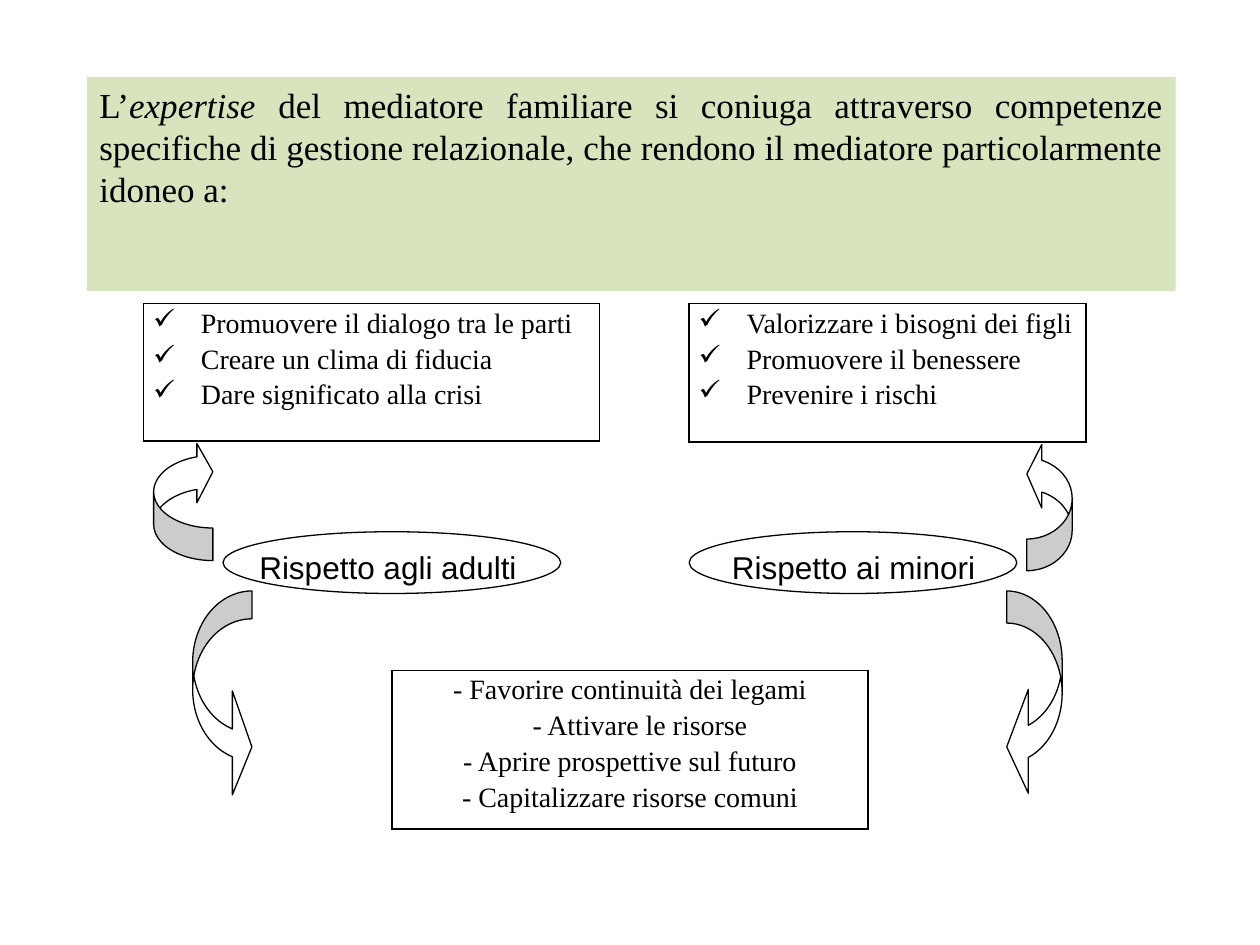
import dataclasses

import lxml.etree
import pptx
import pptx.dml.color
import pptx.enum.shapes
import pptx.enum.text
import pptx.oxml.ns
import pptx.util

SHAPE = pptx.enum.shapes.MSO_SHAPE
ALIGN = pptx.enum.text.PP_ALIGN
qn = pptx.oxml.ns.qn


@dataclasses.dataclass(frozen=True)
class Theme:
    ink: str = "000000"
    paper: str = "FFFFFF"
    banner: str = "D7E4BD"
    serif: str = "Times New Roman"
    sans: str = "Arial"
    banner_size: int = 20
    label_size: int = 18
    list_size: int = 16
    outline: float = 0.75
    border: float = 1
    line_spacing: float = 1.15
    hanging: float = 3.8


class Board:
    COLUMNS, ROWS = 100, 75

    def __init__(self, deck, theme):
        self.theme = theme
        self.column = deck.slide_width / self.COLUMNS
        self.row = deck.slide_height / self.ROWS
        self.page = deck.slides.add_slide(deck.slide_layouts[6])

    def place(self, left, top, width, height):
        return (round(left * self.column), round(top * self.row),
                round(width * self.column), round(height * self.row))

    def color(self, value):
        return pptx.dml.color.RGBColor.from_string(value)

    def style(self, para, face, size):
        for span in para.runs:
            span.font.name = face
            span.font.size = pptx.util.Pt(size)
            span.font.color.rgb = self.color(self.theme.ink)

    def shape(self, kind, area, fill=None, outlined=True, flips="", adjust=()):
        shape = self.page.shapes.add_shape(kind, *self.place(*area))
        shape.shadow.inherit = False
        if fill:
            shape.fill.solid()
            shape.fill.fore_color.rgb = self.color(fill)
        else:
            shape.fill.background()
        if outlined:
            shape.line.color.rgb = self.color(self.theme.ink)
            shape.line.width = pptx.util.Pt(self.theme.outline)
        else:
            shape.line.fill.background()
        for flip in flips:
            shape.element.spPr.find(qn("a:xfrm")).set("flip" + flip, "1")
        for index, value in enumerate(adjust):
            shape.adjustments[index] = value
        return shape

    def arrow(self, area, flips, adjust):
        self.shape(SHAPE.CURVED_LEFT_ARROW, area, self.theme.paper, flips=flips, adjust=adjust)

    def banner(self, area, spans):
        box = self.shape(SHAPE.RECTANGLE, area, self.theme.banner, outlined=False)
        box.text_frame.word_wrap = True
        box.text_frame.vertical_anchor = pptx.enum.text.MSO_ANCHOR.TOP
        para = box.text_frame.paragraphs[0]
        para.alignment = ALIGN.JUSTIFY
        for text, italic in spans:
            span = para.add_run()
            span.text = text
            span.font.italic = italic
        self.style(para, self.theme.serif, self.theme.banner_size)

    def label(self, area, text):
        box = self.page.shapes.add_textbox(*self.place(*area))
        box.text_frame.word_wrap = False
        box.text_frame.text = text
        self.style(box.text_frame.paragraphs[0], self.theme.sans, self.theme.label_size)

    def frame_cell(self, cell):
        properties = cell._tc.get_or_add_tcPr()
        for side in ("a:lnL", "a:lnR", "a:lnT", "a:lnB"):
            line = lxml.etree.SubElement(properties, qn(side),
                                         w=str(pptx.util.Pt(self.theme.border)))
            fill = lxml.etree.SubElement(line, qn("a:solidFill"))
            lxml.etree.SubElement(fill, qn("a:srgbClr"), val=self.theme.ink)
        cell.fill.background()

    def list_table(self, area, lines, bullet=None, shifts=None):
        table = self.page.shapes.add_table(1, 1, *self.place(*area)).table
        table.first_row = table.horz_banding = False
        cell = table.cell(0, 0)
        self.frame_cell(cell)
        cell.margin_left = cell.margin_right = round(0.75 * self.column)
        cell.margin_top = cell.margin_bottom = 0
        cell.text_frame.text = "\n".join(lines)
        for index, para in enumerate(cell.text_frame.paragraphs):
            para.line_spacing = self.theme.line_spacing
            para.alignment = ALIGN.JUSTIFY if bullet else ALIGN.CENTER
            properties = para._p.get_or_add_pPr()
            if bullet:
                hanging = round(self.theme.hanging * self.column)
                properties.set("marL", str(hanging))
                properties.set("indent", str(-hanging))
                lxml.etree.SubElement(properties, qn("a:buChar"), char=bullet)
            elif shifts and index in shifts:
                properties.set("marL", str(round(shifts[index] * self.column)))
            self.style(para, self.theme.serif, self.theme.list_size)


def main():
    deck = pptx.Presentation()
    deck.slide_width = pptx.util.Inches(10)
    deck.slide_height = pptx.util.Inches(7.5)
    board = Board(deck, Theme())

    board.list_table((11.4, 24.1, 36.2, 10.9), [
        "Promuovere il dialogo tra le parti",
        "Creare un clima di fiducia",
        "Dare significato alla crisi",
    ], bullet="✓")
    board.list_table((54.7, 24.1, 31.5, 11), [
        "Valorizzare i bisogni dei figli",
        "Promuovere il benessere",
        "Prevenire i rischi",
    ], bullet="✓")
    board.list_table((31.1, 53.2, 37.8, 12.6), [
        "- Favorire continuità dei legami",
        "- Attivare le risorse",
        "- Aprire prospettive sul futuro",
        "- Capitalizzare risorse comuni",
    ], shifts={1: 1.6})

    for left, width in ((17.7, 26.8), (54.7, 26)):
        board.shape(SHAPE.OVAL, (left, 42.2, width, 4.9))

    for area, flips, adjust in (
        ((12.2, 35.1, 4.7, 9.4), "HV", (0.55, 1.13, 0.27)),
        ((15.3, 46.9, 4.7, 16.5), "H", (0.47, 2.36, 0.33)),
        ((81.5, 35.1, 3.6, 10.2), "V", (0.7, 1.4, 0.33)),
        ((79.9, 46.9, 4.4, 16.5), "", (0.58, 2.37, 0.39)),
    ):
        board.arrow(area, flips, adjust)

    board.banner((6.9, 6.1, 86.4, 17), [
        ("L’", False),
        ("expertise", True),
        (" del mediatore familiare si coniuga attraverso competenze specifiche di gestione "
         "relazionale, che rendono il mediatore particolarmente idoneo a:", False),
    ])
    board.label((19.6, 43, 22.6, 4), "Rispetto agli adulti")
    board.label((57.1, 43, 21.5, 4), "Rispetto ai minori")
    deck.save("out.pptx")


if __name__ == "__main__":
    main()
